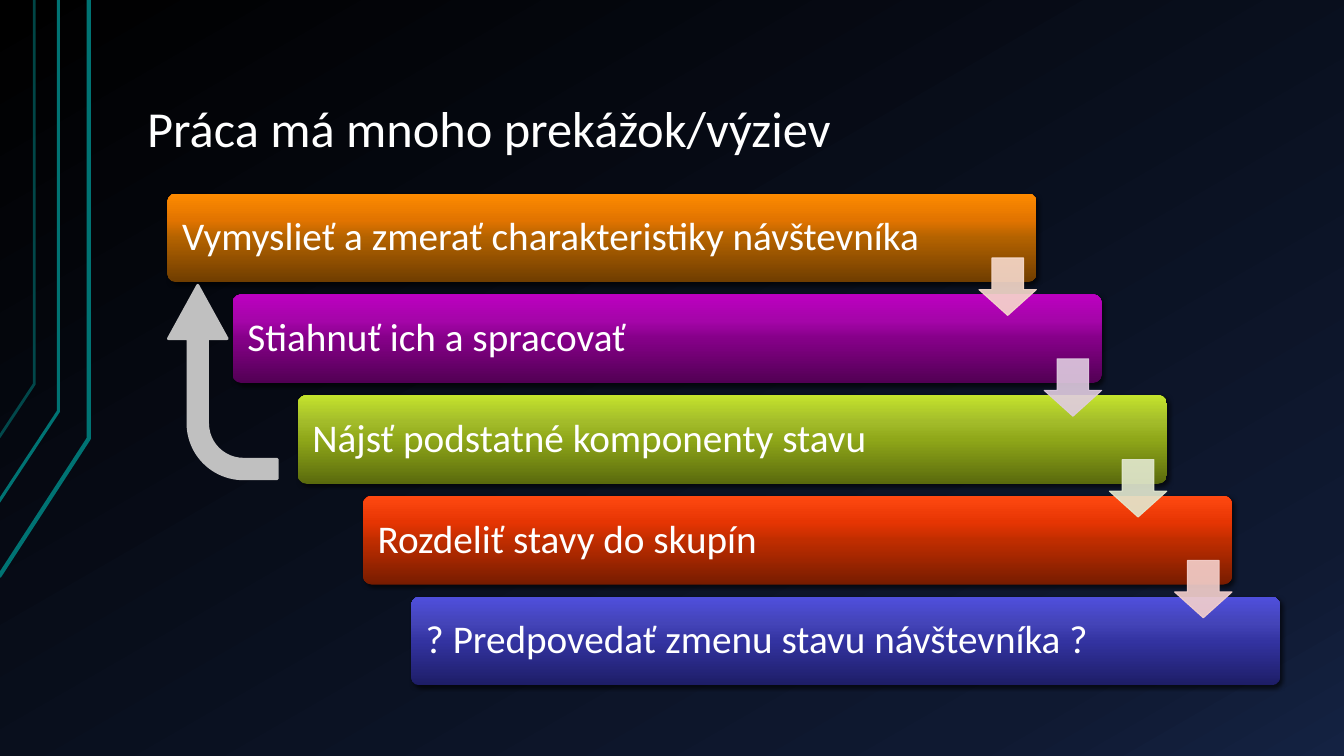
from dataclasses import dataclass

from lxml.etree import SubElement
from pptx import Presentation
from pptx.dml.color import RGBColor
from pptx.enum.shapes import MSO_SHAPE
from pptx.enum.text import MSO_ANCHOR, MSO_AUTO_SIZE, PP_ALIGN
from pptx.oxml.ns import qn
from pptx.util import Inches, Pt

COLORS = {
    "text": "FFFFFF",
    "shadow": "000000",
    "trace": "007373",
    "loop": "C0C0C0",
}
NIGHT = ((0, "000000"), (85, "0F1931"), (100, "142242"))

LEFT, TOP = 1.66, 1.92
SHIFT, DROP = 1.94 / 3, 1.0
WIDTH, HEIGHT = 8.62, 0.88
ARROW = 0.57


@dataclass
class Step:
    label: str
    shades: tuple[str, str, str, str]
    arrow: str | None
    nudge: float = 0


@dataclass
class Trace:
    points: tuple[tuple[float, float], ...]
    weight: float
    alpha: int = 100


STEPS = (
    Step("Vymyslieť a zmerať charakteristiky návštevníka",
         ("6F3D00", "B36200", "E27400", "FE8B00"), "F7DACC"),
    Step("Stiahnuť ich a spracovať",
         ("520054", "850088", "A505A9", "BC00C0"), "E0CCE1"),
    Step("Nájsť podstatné komponenty stavu",
         ("5A6A0D", "8FA719", "A3BC2A", "C4E32D"), "E3E9D0"),
    Step("Rozdeliť stavy do skupín",
         ("771C00", "C02D00", "E63503", "FF4911"), "F5D1CD"),
    Step("? Predpovedať zmenu stavu návštevníka ?",
         ("1D1D66", "3333A1", "4444B8", "4F4FDD"), None, nudge=-0.17),
)
TRACES = (
    Trace(((-0.01, 5.72), (0.88, 4.35), (0.88, 0)), 3),
    Trace(((-0.02, 4.99), (0.58, 4.08), (0.58, 0)), 2.25),
    Trace(((-0.01, 4.34), (0.34, 3.81), (0.34, 0)), 2, alpha=60),
)


def write(frame, text: str, *, size: float, anchor, side: float,
          edge: float) -> None:
    """Put one left-aligned line of text in a frame."""
    frame.word_wrap = True
    frame.auto_size = MSO_AUTO_SIZE.NONE
    frame.vertical_anchor = anchor
    frame.margin_left = frame.margin_right = Inches(side)
    frame.margin_top = frame.margin_bottom = Inches(edge)
    para = frame.paragraphs[0]
    para.alignment = PP_ALIGN.LEFT
    para.line_spacing = 0.9
    run = para.add_run()
    run.text = text
    run.font.name = "Calibri"
    run.font.size = Pt(size)
    run.font.color.rgb = RGBColor.from_string(COLORS["text"])


def grade(fill, root, stops, angle: int) -> None:
    """Give a fill its gradient stops and clockwise angle."""
    fill.gradient()
    grad = next(root.iter(qn("a:gradFill")))
    for child in list(grad):
        grad.remove(child)
    group = SubElement(grad, qn("a:gsLst"))
    for pos, color in stops:
        stop = SubElement(group, qn("a:gs"), pos=str(pos * 1000))
        SubElement(stop, qn("a:srgbClr"), val=color)
    SubElement(grad, qn("a:lin"), ang=str(angle * 60000), scaled="0")


def fade(shape, alpha: int) -> None:
    """Make the fill and line of a shape partly clear."""
    for color in shape._element.spPr.iter(qn("a:srgbClr")):
        SubElement(color, qn("a:alpha"), val=str(alpha * 1000))


def shade(shape) -> None:
    """Cast a soft shadow to the lower right."""
    effect = shape._element.spPr.find(qn("a:effectLst"))
    outer = SubElement(effect, qn("a:outerShdw"), blurRad=str(Pt(3)),
                       dist=str(Pt(2)), dir=str(45 * 60000), rotWithShape="0")
    color = SubElement(outer, qn("a:srgbClr"), val=COLORS["shadow"])
    SubElement(color, qn("a:alpha"), val="60000")


def place(slide, kind, box, adjust):
    """Add a preset shape without the theme's shadow."""
    shape = slide.shapes.add_shape(kind, *map(Inches, box))
    shape.shadow.inherit = False
    for index, value in enumerate(adjust):
        shape.adjustments[index] = value
    return shape


def paint(shape, color: str, weight: float) -> None:
    """Use one colour for fill and line."""
    rgb = RGBColor.from_string(color)
    shape.fill.solid()
    shape.fill.fore_color.rgb = rgb
    shape.line.color.rgb = rgb
    shape.line.width = Pt(weight)


def draw_trace(slide, trace: Trace) -> None:
    start, *rest = [(Inches(x), Inches(y)) for x, y in trace.points]
    pen = slide.shapes.build_freeform(*start)
    pen.add_line_segments(rest, close=False)
    shape = pen.convert_to_shape()
    shape.shadow.inherit = False
    shape.fill.background()
    shape.line.color.rgb = RGBColor.from_string(COLORS["trace"])
    shape.line.width = Pt(trace.weight)
    if trace.alpha < 100:
        fade(shape, trace.alpha)


def draw_bar(slide, index: int, step: Step) -> None:
    left = LEFT + index * SHIFT + step.nudge
    box = (left, TOP + index * DROP, WIDTH, HEIGHT)
    bar = place(slide, MSO_SHAPE.ROUNDED_RECTANGLE, box, (0.1,))
    grade(bar.fill, bar._element, zip((0, 50, 70, 100), step.shades), 270)
    bar.line.fill.background()
    shade(bar)
    write(bar.text_frame, step.label, size=28, anchor=MSO_ANCHOR.MIDDLE,
          side=0.12, edge=0.12)


def draw_arrow(slide, index: int, color: str) -> None:
    box = (LEFT + WIDTH - ARROW + index * SHIFT, TOP + 0.64 + index * DROP,
           ARROW, ARROW)
    arrow = place(slide, MSO_SHAPE.DOWN_ARROW, box, (0.55, 0.45))
    paint(arrow, color, 0.75)
    fade(arrow, 90)


def main() -> None:
    deck = Presentation()
    deck.slide_width, deck.slide_height = Inches(13.33), Inches(7.5)
    slide = deck.slides.add_slide(deck.slide_layouts[5])

    # Background and corner lines
    grade(slide.background.fill, slide.element, NIGHT, 60)
    for trace in TRACES:
        draw_trace(slide, trace)

    # Title
    title = slide.shapes.title
    title.left, title.top = Inches(1.33), Inches(0.3)
    title.width, title.height = Inches(11.33), Inches(1.34)
    write(title.text_frame, "Práca má mnoho prekážok/výziev", size=36,
          anchor=MSO_ANCHOR.BOTTOM, side=0.13, edge=0.07)

    # Staircase of steps, with the arrows on top
    for index, step in enumerate(STEPS):
        draw_bar(slide, index, step)
    for index, step in enumerate(STEPS):
        if step.arrow:
            draw_arrow(slide, index, step.arrow)

    # Loop back to the first step
    loop = place(slide, MSO_SHAPE.BENT_ARROW, (1.25, 3.25, 1.92, 1.08),
                 (0.18, 0.27, 0.49, 0.51))
    loop.rotation = 270
    paint(loop, COLORS["loop"], 2)

    deck.save("out.pptx")


if __name__ == "__main__":
    main()
